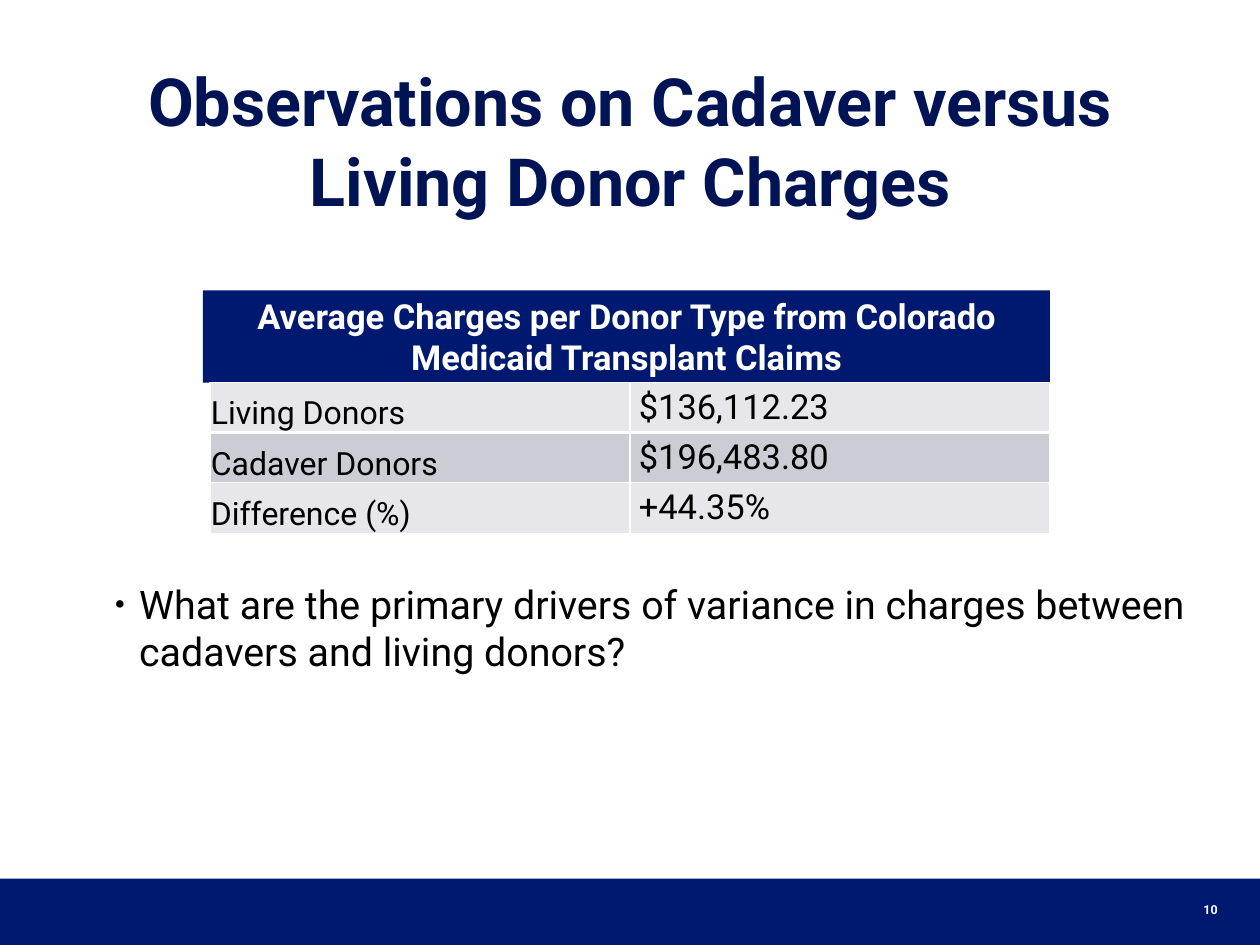
import pptx
import pptx.util
import pptx.dml.color
import pptx.enum.shapes
import pptx.enum.text
from lxml import etree

Inches = pptx.util.Inches
Pt = pptx.util.Pt
Align = pptx.enum.text.PP_ALIGN
Anchor = pptx.enum.text.MSO_ANCHOR
NAMESPACE = "{http://schemas.openxmlformats.org/drawingml/2006/main}"
COLORS = {
    "navy": "001970",
    "title": "001354",
    "white": "FFFFFF",
    "black": "000000",
    "light": "E7E7EB",
    "dark": "CCCCD5",
}
CHARGES = [
    ("Living Donors", "$136,112.23"),
    ("Cadaver Donors", "$196,483.80"),
    ("Difference (%)", "+44.35%"),
]


class SlideBuilder:
    """Holds the slide and its style, with a method for each kind of element."""

    font = "Roboto"

    def __init__(self, slide):
        self.slide = slide

    def color(self, name):
        return pptx.dml.color.RGBColor.from_string(COLORS[name])

    def set_text(self, text_frame, text, size, color, bold=False,
                 align=Align.LEFT, anchor=Anchor.TOP):
        text_frame.text = text
        text_frame.word_wrap = True
        text_frame.vertical_anchor = anchor
        paragraph = text_frame.paragraphs[0]
        paragraph.alignment = align
        paragraph.space_before = Pt(0)
        font = paragraph.runs[0].font
        font.name, font.size, font.bold = self.font, Pt(size), bold
        font.color.rgb = self.color(color)
        return paragraph

    def place(self, shape, left, top, width, height):
        shape.left, shape.top = Inches(left), Inches(top)
        shape.width, shape.height = Inches(width), Inches(height)

    def title(self, text, *box):
        shape = self.slide.shapes.title
        self.place(shape, *box)
        text_frame = shape.text_frame
        text_frame.margin_left = text_frame.margin_right = 0
        text_frame.margin_top = text_frame.margin_bottom = 0
        text_frame.auto_size = pptx.enum.text.MSO_AUTO_SIZE.NONE
        self.set_text(text_frame, text, 54, "title", True, Align.CENTER)

    def bullet(self, text, *box):
        shape = self.slide.placeholders[1]
        self.place(shape, *box)
        shape.text_frame.auto_size = pptx.enum.text.MSO_AUTO_SIZE.NONE
        paragraph = self.set_text(shape.text_frame, text, 32, "black")
        properties = paragraph._p.get_or_add_pPr()
        properties.set("marL", str(Inches(0.8)))
        properties.set("indent", str(Inches(-0.27)))
        etree.SubElement(properties, NAMESPACE + "buSzPct", val="70000")
        etree.SubElement(properties, NAMESPACE + "buChar", char="•")

    def rectangle(self, *box):
        shape = self.slide.shapes.add_shape(
            pptx.enum.shapes.MSO_SHAPE.RECTANGLE, *map(Inches, box))
        shape.shadow.inherit = False
        shape.fill.solid()
        shape.fill.fore_color.rgb = self.color("navy")
        shape.line.fill.background()
        return shape

    def text_box(self, text, size, color, align, *box):
        shape = self.slide.shapes.add_textbox(*map(Inches, box))
        self.set_text(shape.text_frame, text, size, color, True, align, Anchor.MIDDLE)

    def borders(self, cell, top, bottom):
        properties = cell._tc.get_or_add_tcPr()
        for side, width in (("L", 1), ("R", 1), ("T", top), ("B", bottom)):
            line = etree.SubElement(properties, NAMESPACE + "ln" + side, w=str(Pt(width)))
            fill = etree.SubElement(line, NAMESPACE + "solidFill")
            etree.SubElement(fill, NAMESPACE + "srgbClr", val=COLORS["white"])

    def table(self, rows, *box):
        table = self.slide.shapes.add_table(
            len(rows), len(rows[0]), *map(Inches, box)).table
        table.first_row = table.horz_banding = False
        for row_index, (label, amount) in enumerate(rows):
            label_cell, amount_cell = table.rows[row_index].cells
            label_cell.margin_left = label_cell.margin_right = Inches(0.01)
            label_cell.margin_top, label_cell.margin_bottom = Inches(0.01), 0
            for cell, text, size, anchor in (
                    (label_cell, label, 26, Anchor.BOTTOM),
                    (amount_cell, amount, 28, Anchor.MIDDLE)):
                self.set_text(cell.text_frame, text, size, "black")
                cell.vertical_anchor = anchor
                self.borders(cell, 3 if row_index == 1 else 1, 3 if row_index == 0 else 1)
                cell.fill.solid()
                cell.fill.fore_color.rgb = self.color("dark" if row_index % 2 else "light")


def main():
    presentation = pptx.Presentation()
    presentation.slide_width = Inches(14.22)
    presentation.slide_height = Inches(10.67)
    builder = SlideBuilder(presentation.slides.add_slide(presentation.slide_layouts[1]))
    builder.rectangle(0, 9.92, 14.22, 0.75)
    builder.title("Observations on Cadaver versus Living Donor Charges",
                  0.98, 0.68, 12.27, 2.21)
    header = builder.rectangle(2.29, 3.28, 9.56, 1.04)
    builder.set_text(header.text_frame,
                     "Average Charges per Donor Type from Colorado Medicaid Transplant Claims",
                     28, "white", True, Align.CENTER, Anchor.MIDDLE)
    builder.table(CHARGES, 2.37, 4.32, 9.48, 1.7)
    builder.bullet("What are the primary drivers of variance in charges between "
                   "cadavers and living donors?", 0.67, 6.5, 12.89, 1.07)
    builder.text_box("10", 10.1, "white", Align.RIGHT, 11.49, 9.99, 2.35, 0.57)
    presentation.save("out.pptx")


if __name__ == "__main__":
    main()
